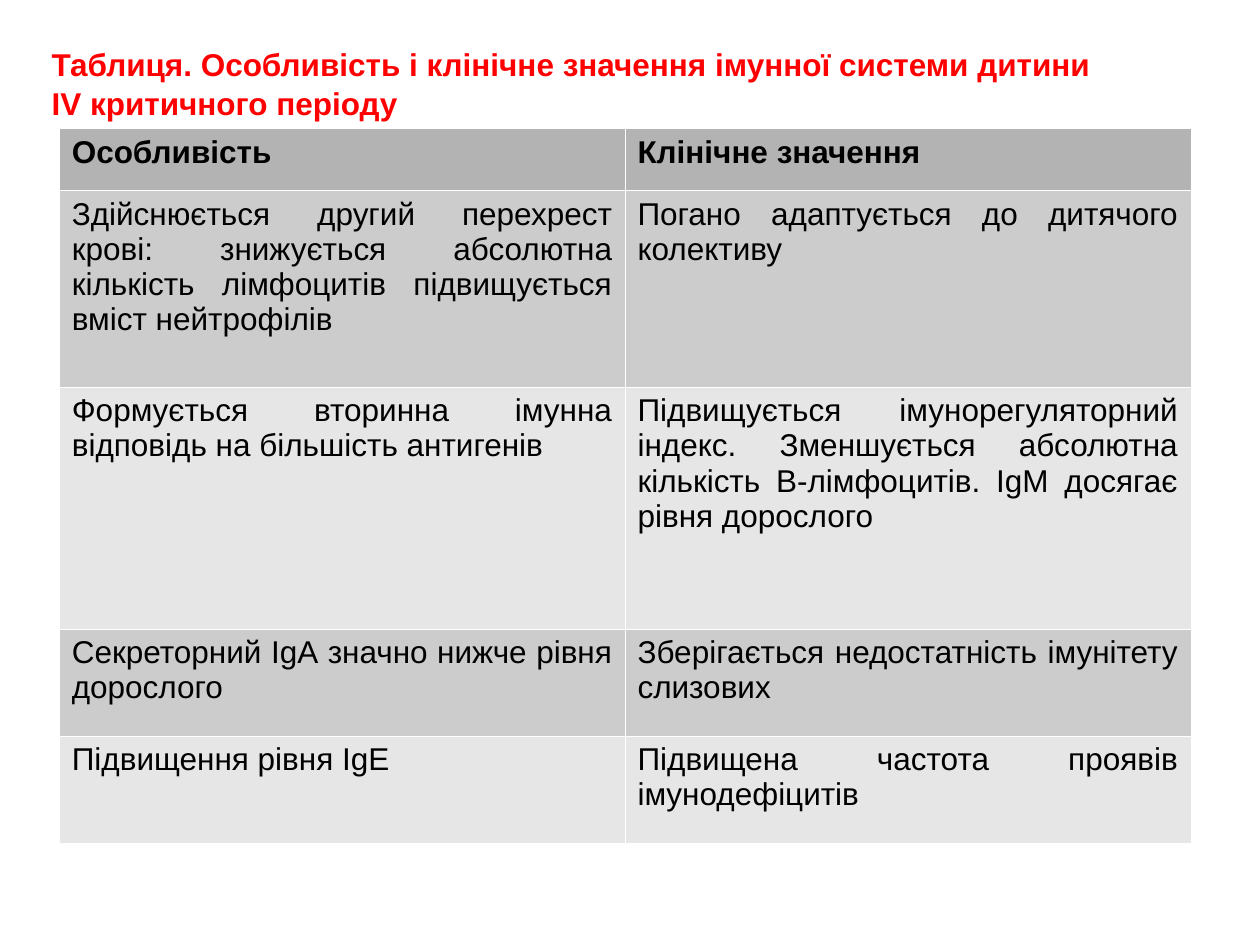
from lxml import etree
from pptx import Presentation
from pptx.dml.color import RGBColor
from pptx.enum.text import MSO_ANCHOR, MSO_AUTO_SIZE, PP_ALIGN
from pptx.oxml.ns import qn
from pptx.util import Inches, Pt

JUSTIFY = PP_ALIGN.JUSTIFY
TOP = MSO_ANCHOR.TOP
NO_AUTOFIT = MSO_AUTO_SIZE.NONE
TITLE_ONLY = 5

TITLE = [
    "Таблиця. Особливість і клінічне значення імунної системи дитини",
    "ІV критичного періоду",
]
ROWS = [
    ("Особливість", "Клінічне значення"),
    ("Здійснюється другий перехрест крові: знижується абсолютна кількість "
     "лімфоцитів підвищується вміст нейтрофілів",
     "Погано адаптується до дитячого колективу"),
    ("Формується вторинна імунна відповідь на більшість антигенів",
     "Підвищується імунорегуляторний індекс. Зменшується абсолютна кількість "
     "В-лімфоцитів. IgМ досягає рівня дорослого"),
    ("Секреторний IgА значно нижче рівня дорослого",
     "Зберігається недостатність імунітету слизових"),
    ("Підвищення рівня IgЕ", "Підвищена частота проявів імунодефіцитів"),
]
ROW_HEIGHTS = [0.49, 1.56, 1.92, 0.85, 0.85]


def color(value):
    return RGBColor.from_string(value)


class SlideBuilder:
    font = {"name": "Arial", "size": Pt(18)}
    title_color = "FF0000"
    text_color = "000000"
    header_fill = "B3B3B3"
    band_fills = ("CCCCCC", "E6E6E6")
    border_color = "FFFFFF"
    border_width = Pt(0.06)
    margins = {"margin_left": Inches(0.1), "margin_right": Inches(0.1),
               "margin_top": Inches(0.05), "margin_bottom": Inches(0.05)}

    def __init__(self, deck):
        self.slide = deck.slides.add_slide(deck.slide_layouts[TITLE_ONLY])

    def apply(self, target, values):
        for name, value in values.items():
            setattr(target, name, value)

    def fill_text(self, frame, lines, text_color, bold, spacing=None):
        frame.text = "\n".join(lines)
        for para in frame.paragraphs:
            self.apply(para, {"alignment": JUSTIFY, "line_spacing": spacing})
            for span in para.runs:
                self.apply(span.font, {**self.font, "bold": bold})
                span.font.color.rgb = color(text_color)

    def title(self, lines, left, top, width, height):
        box = self.slide.shapes.title
        self.apply(box, {"left": Inches(left), "top": Inches(top),
                         "width": Inches(width), "height": Inches(height)})
        self.apply(box.text_frame, {**self.margins, "word_wrap": True,
                                    "auto_size": NO_AUTOFIT,
                                    "vertical_anchor": TOP})
        self.fill_text(box.text_frame, lines, self.title_color, True, 1.05)

    def borders(self, cell):
        properties = cell._tc.get_or_add_tcPr()
        for index, side in enumerate(("a:lnL", "a:lnR", "a:lnT", "a:lnB")):
            line = etree.Element(qn(side), w=str(int(self.border_width)))
            fill = etree.SubElement(line, qn("a:solidFill"))
            etree.SubElement(fill, qn("a:srgbClr"), val=self.border_color)
            properties.insert(index, line)

    def table(self, rows, heights, left, top, width):
        columns = len(rows[0])
        table = self.slide.shapes.add_table(
            len(rows), columns, Inches(left), Inches(top),
            Inches(width), Inches(sum(heights))).table
        for row_index, texts in enumerate(rows):
            table.rows[row_index].height = Inches(heights[row_index])
            header = row_index == 0
            fill = self.header_fill if header else self.band_fills[(row_index - 1) % 2]
            for column_index, text in enumerate(texts):
                cell = table.cell(row_index, column_index)
                self.apply(cell, {**self.margins, "vertical_anchor": TOP})
                cell.fill.solid()
                cell.fill.fore_color.rgb = color(fill)
                self.borders(cell)
                self.fill_text(cell.text_frame, [text], self.text_color, header)


def main():
    deck = Presentation()
    deck.slide_width, deck.slide_height = Inches(10), Inches(7.5)
    builder = SlideBuilder(deck)

    # Heading
    builder.title(TITLE, 0.31, 0.29, 9.37, 0.7)

    # Features and their clinical meaning
    builder.table(ROWS, ROW_HEIGHTS, 0.47, 1.02, 8.98)

    deck.save("out.pptx")


if __name__ == "__main__":
    main()
